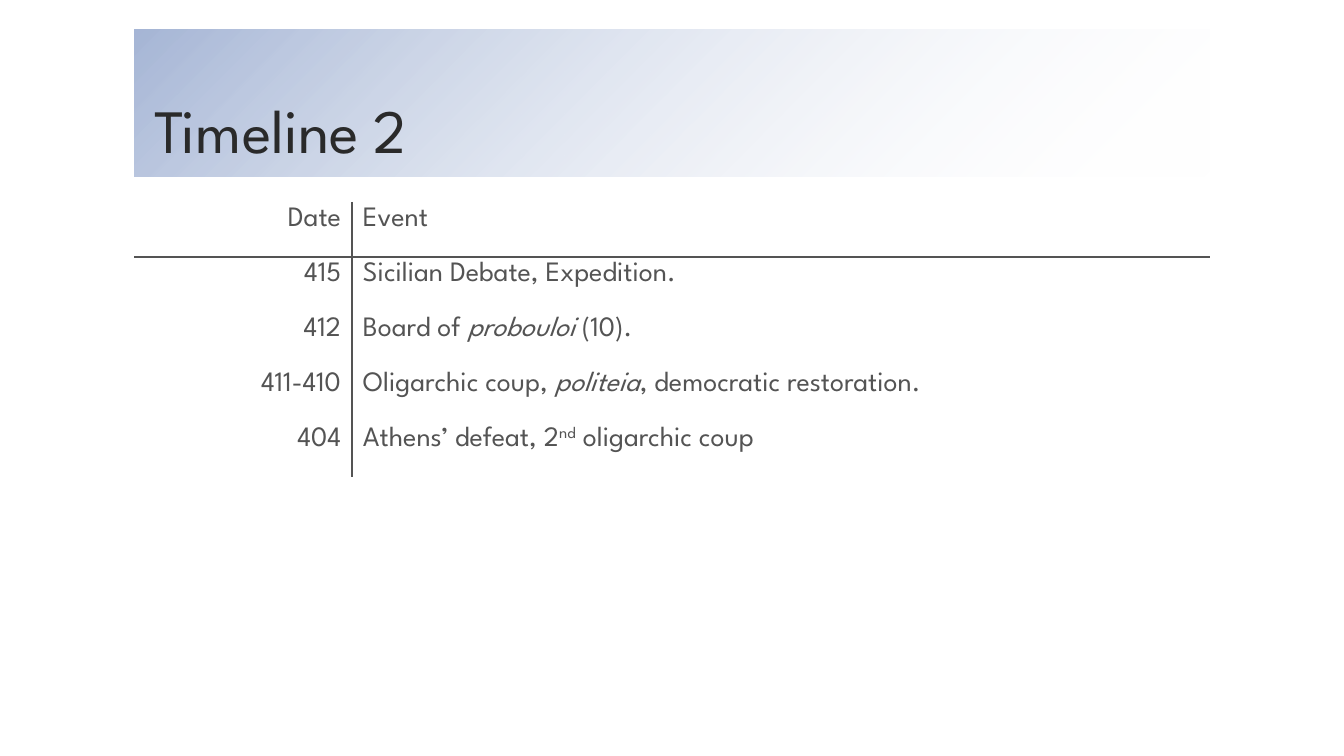
from dataclasses import dataclass

from lxml.etree import SubElement
from pptx import Presentation
from pptx.dml.color import RGBColor as RGB
from pptx.enum.text import MSO_ANCHOR as Anchor, MSO_AUTO_SIZE as Fit, PP_ALIGN as Align
from pptx.oxml import parse_xml
from pptx.oxml.ns import nsdecls, qn
from pptx.util import Pt

SCALE = 914400 / 100.8


def px(n):
    return round(n * SCALE)


@dataclass(frozen=True)
class Theme:
    font: str = "League Spartan"
    dark: str = "2A2A2A"
    grey: str = "545454"
    blue: str = "A6B6D6"
    white: str = "FFFFFF"
    head: int = 44
    body: int = 20
    rule: int = 1


class Deck:
    def __init__(self, theme, wide, high):
        self.theme = theme
        self.file = Presentation()
        self.file.slide_width, self.file.slide_height = px(wide), px(high)
        self.slide = self.file.slides.add_slide(self.file.slide_layouts[5])

    def style(self, run, size, color):
        run.font.name = self.theme.font
        run.font.size = Pt(size)
        run.font.color.rgb = RGB.from_string(color)

    def title(self, text, left, top, wide, high):
        box = self.slide.shapes.title
        box.left, box.top, box.width, box.height = map(px, (left, top, wide, high))
        self.fade(box)
        frame = box.text_frame
        frame.text = text
        frame.word_wrap = True
        frame.auto_size = Fit.NONE
        frame.vertical_anchor = Anchor.BOTTOM
        frame.margin_left = frame.margin_right = px(20)
        frame.margin_top = frame.margin_bottom = px(10)
        para = frame.paragraphs[0]
        para.alignment = Align.LEFT
        para.line_spacing = 0.9
        self.style(para.runs[0], self.theme.head, self.theme.dark)

    def fade(self, box):
        """Fill the box with blue that turns clear towards the lower right."""
        box.fill.gradient()
        box.fill.gradient_angle = 315
        for stop, color in zip(box.fill.gradient_stops, (self.theme.blue, self.theme.white)):
            stop.color.rgb = RGB.from_string(color)
        last = list(box._element.spPr.iter(qn("a:srgbClr")))[-1]
        SubElement(last, qn("a:alpha"), val="0")

    def table(self, rows, left, top, cols, step):
        grid = self.slide.shapes.add_table(
            len(rows), len(cols), px(left), px(top), px(sum(cols)), px(step * len(rows))
        ).table
        grid.first_row = grid.horz_banding = False
        for col, wide in zip(grid.columns, cols):
            col.width = px(wide)
        for r, row in enumerate(rows):
            grid.rows[r].height = px(step)
            for c, parts in enumerate(row):
                cell = grid.cell(r, c)
                self.label(cell, parts, Align.LEFT if c else Align.RIGHT)
                sides = {"L" if c else "R"}
                if r < 2:
                    sides.add("T" if r else "B")
                self.border(cell, sides)

    def label(self, cell, parts, align):
        """Put in plain text, or a list of (text, kind) parts."""
        cell.fill.background()
        cell.margin_left = cell.margin_right = px(11)
        cell.margin_top = cell.margin_bottom = px(5)
        para = cell.text_frame.paragraphs[0]
        para.alignment = align
        para.space_before = Pt(4)
        for text, kind in [(parts, "")] if isinstance(parts, str) else parts:
            run = para.add_run()
            run.text = text
            self.style(run, self.theme.body, self.theme.grey)
            if kind == "italic":
                run.font.italic = True
            elif kind == "super":
                run.font._element.set("baseline", "30000")

    def border(self, cell, sides):
        props = cell._tc.get_or_add_tcPr()
        for i, side in enumerate("LRTB"):
            fill = "<a:noFill/>"
            if side in sides:
                fill = f'<a:solidFill><a:srgbClr val="{self.theme.grey}"/></a:solidFill>'
            line = f'<a:ln{side} {nsdecls("a")} w="{Pt(self.theme.rule)}">{fill}</a:ln{side}>'
            props.insert(i, parse_xml(line))


EVENTS = [
    ("Date", "Event"),
    ("415", "Sicilian Debate, Expedition."),
    ("412", [("Board of ", ""), ("probouloi", "italic"), (" (10).", "")]),
    ("411-410", [("Oligarchic coup, ", ""), ("politeia", "italic"),
                 (", democratic restoration.", "")]),
    ("404", [("Athens’ defeat, 2", ""), ("nd", "super"), (" oligarchic coup", "")]),
]


def main():
    deck = Deck(Theme(), 1344, 756)
    deck.title("Timeline 2", 134, 30, 1076, 147)
    deck.table(EVENTS, 134, 202, (218, 858), 55)
    deck.file.save("out.pptx")


if __name__ == "__main__":
    main()
